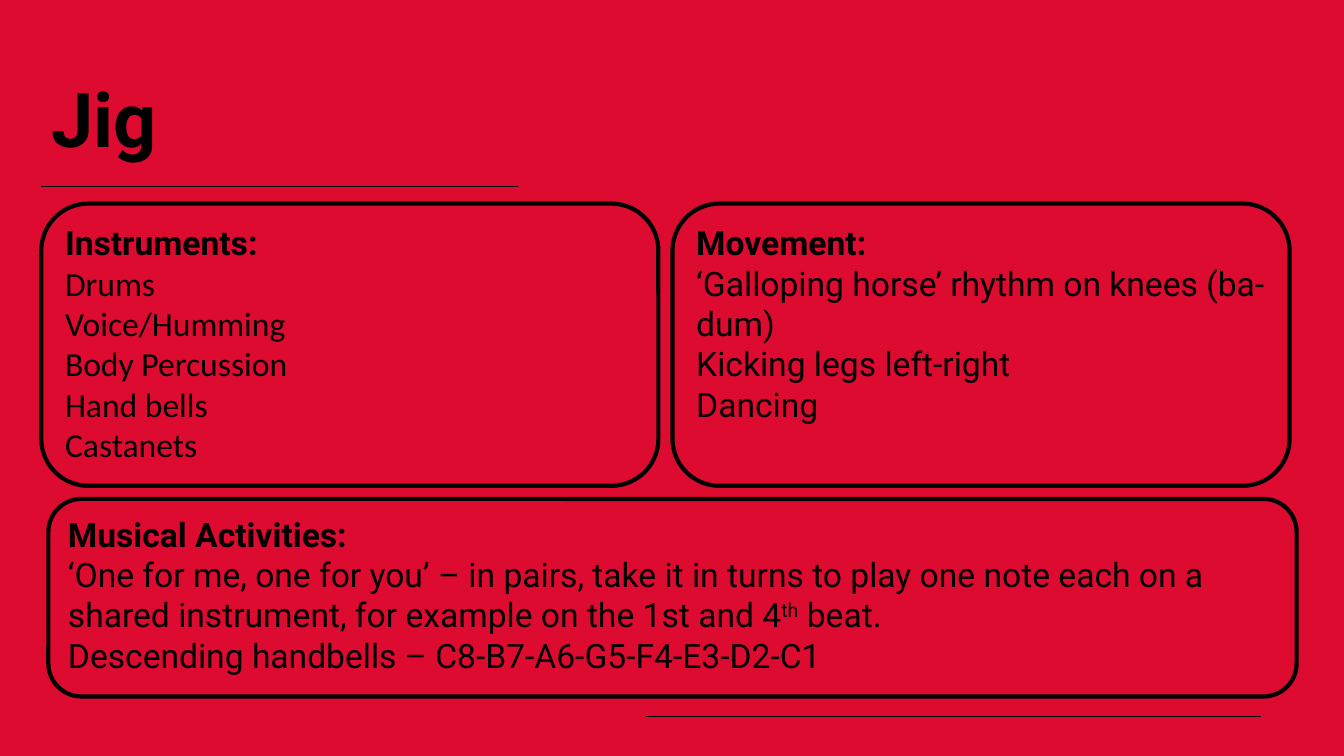
from lxml import etree
from pptx import Presentation
from pptx.dml.color import RGBColor
from pptx.enum.shapes import MSO_CONNECTOR, MSO_SHAPE
from pptx.enum.text import MSO_ANCHOR, PP_ALIGN
from pptx.oxml.ns import qn
from pptx.util import Inches, Pt

ROUND = MSO_SHAPE.ROUNDED_RECTANGLE
LINE = MSO_CONNECTOR.STRAIGHT
TOP = MSO_ANCHOR.TOP
LEFT = PP_ALIGN.LEFT


def color(code):
    return RGBColor.from_string(code)


class Deck:
    ink, back = "000000", "DD0B2F"
    face, size = "Roboto", 24

    def __init__(self):
        self.prs = Presentation()
        self.prs.slide_width = Inches(13.33)
        self.prs.slide_height = Inches(7.5)
        self.slide = self.prs.slides.add_slide(self.prs.slide_layouts[6])
        fill = self.slide.background.fill
        fill.solid()
        fill.fore_color.rgb = color(self.back)

    def style(self, run, size, bold, face):
        font = run.font
        font.name, font.size, font.bold = face, Pt(size), bold
        font.color.rgb = color(self.ink)

    def rule(self, x1, x2, y):
        line = self.slide.shapes.add_connector(
            LINE, Inches(x1), Inches(y), Inches(x2), Inches(y))
        line.line.color.rgb = color(self.ink)
        line.line.width = Pt(1)
        etree.SubElement(line._element.spPr, qn("a:effectLst"))

    def title(self, text, x, y, w, h):
        box = self.slide.shapes.add_textbox(
            Inches(x), Inches(y), Inches(w), Inches(h))
        frame = box.text_frame
        frame.word_wrap = True
        frame.vertical_anchor = TOP
        frame.text = text
        para = frame.paragraphs[0]
        para.line_spacing = 0.9
        self.style(para.runs[0], 54, True, self.face)

    def panel(self, head, items, x, y, w, h, face=face):
        """Text between ^ marks in an item is raised."""
        box = self.slide.shapes.add_shape(
            ROUND, Inches(x), Inches(y), Inches(w), Inches(h))
        box.shadow.inherit = False
        box.fill.background()
        box.line.color.rgb = color(self.ink)
        box.line.width = Pt(3)
        frame = box.text_frame
        frame.word_wrap = True
        frame.vertical_anchor = TOP
        frame.text = head
        for item in items:
            first, *rest = item.split("^")
            para = frame.add_paragraph()
            para.text = first
            for i, part in enumerate(rest):
                run = para.add_run()
                run.text = part
                if i % 2 == 0:
                    run._r.get_or_add_rPr().set("baseline", "30000")
        for i, para in enumerate(frame.paragraphs):
            para.alignment = LEFT
            for run in para.runs:
                self.style(run, self.size, i == 0, face if i else self.face)


def main():
    deck = Deck()

    # Rules and title
    deck.rule(6.41, 12.51, 7.11)
    deck.rule(0.41, 5.14, 1.85)
    deck.title("Jig", 0.41, 0.77, 7.43, 1.26)

    # Wide lower panel
    deck.panel("Musical Activities:", [
        "‘One for me, one for you’ – in pairs, take it in turns to play one "
        "note each on a shared instrument, for example on the 1st and "
        "4^th^ beat.",
        "Descending handbells – C8-B7-A6-G5-F4-E3-D2-C1",
    ], 0.48, 4.95, 12.38, 1.96)

    # Upper pair of panels
    pair = [
        ("Instruments:", ["Drums", "Voice/Humming", "Body Percussion",
                          "Hand bells", "Castanets"], "Calibri"),
        ("Movement:", ["‘Galloping horse’ rhythm on knees (ba-dum)",
                       "Kicking legs left-right", "Dancing"], deck.face),
    ]
    for i, (head, items, face) in enumerate(pair):
        deck.panel(head, items, 0.41 + i * 6.26, 2.02, 6.12, 2.8, face)

    deck.prs.save("out.pptx")


if __name__ == "__main__":
    main()
